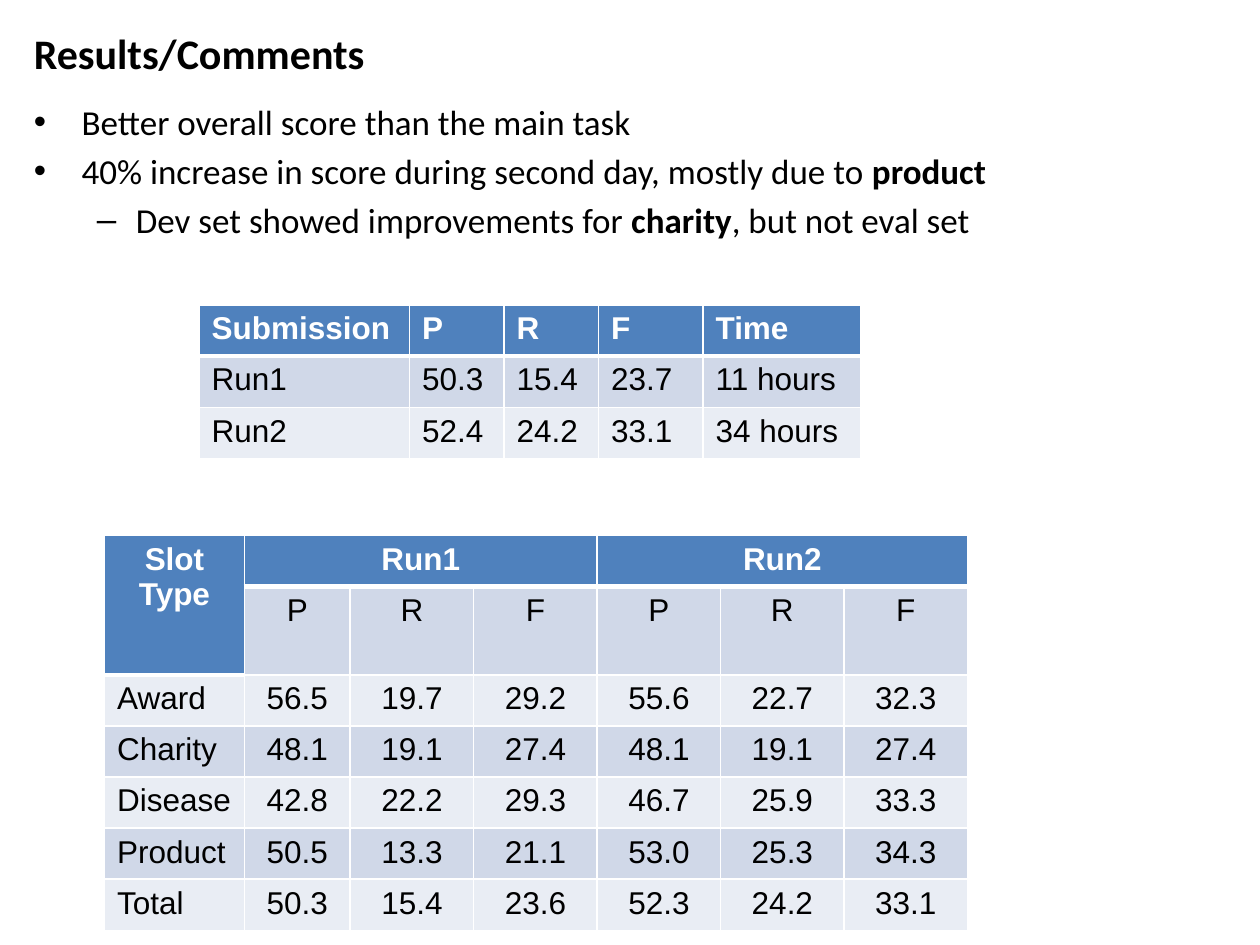
import dataclasses

import lxml.etree
import pptx
import pptx.dml.color
import pptx.enum.text
import pptx.oxml.ns
import pptx.util

Inches = pptx.util.Inches
Pt = pptx.util.Pt
CENTER = pptx.enum.text.PP_ALIGN.CENTER
LEFT = pptx.enum.text.PP_ALIGN.LEFT


@dataclasses.dataclass(frozen=True)
class Theme:
    text: str = "000000"
    inverse: str = "FFFFFF"
    header: str = "4F81BD"
    bands: tuple = ("D0D8E8", "E9EDF4")
    border: str = "FFFFFF"
    text_font: str = "Calibri"
    table_font: str = "Arial"
    title_size: int = 24
    body_size: int = 20
    table_size: int = 18
    thin: int = 1
    thick: int = 3


THEME = Theme()


def rgb(value):
    return pptx.dml.color.RGBColor.from_string(value)


def add_element(parent, tag, **attributes):
    return lxml.etree.SubElement(parent, pptx.oxml.ns.qn(tag), attributes)


def write_text(para, text, font=THEME.text_font, size=THEME.body_size,
               color=THEME.text, bold=False, align=LEFT):
    para.alignment = align
    span = para.add_run()
    span.text = text
    span.font.name = font
    span.font.size = Pt(size)
    span.font.color.rgb = rgb(color)
    span.font.bold = bold


def set_bullet(para, mark, indent, hanging):
    properties = para._p.get_or_add_pPr()
    properties.set("marL", str(Inches(indent)))
    properties.set("indent", str(-Inches(hanging)))
    add_element(properties, "a:buFont", typeface="Arial")
    add_element(properties, "a:buChar", char=mark)


def add_text_frame(page, box):
    frame = page.shapes.add_textbox(*map(Inches, box)).text_frame
    frame.word_wrap = True
    return frame


def add_title(page, box, text):
    frame = add_text_frame(page, box)
    frame.vertical_anchor = pptx.enum.text.MSO_ANCHOR.MIDDLE
    write_text(frame.paragraphs[0], text, size=THEME.title_size, bold=True)


def add_comments(page, box, comments):
    bullets = (("•", 0.38, 0.38), ("–", 0.81, 0.31))
    frame = add_text_frame(page, box)
    for index, (level, spans) in enumerate(comments):
        para = frame.add_paragraph() if index else frame.paragraphs[0]
        para.level = level
        if index:
            para.space_before = Pt(THEME.body_size * 0.2)
        set_bullet(para, *bullets[level])
        for text, bold in spans:
            write_text(para, text, bold=bold)


def set_borders(cell, first_row, header):
    properties = cell._tc.get_or_add_tcPr()
    bottom = THEME.thick if header else THEME.thin
    widths = {"a:lnL": THEME.thin, "a:lnR": THEME.thin}
    if first_row:
        widths["a:lnT"] = THEME.thin
    widths["a:lnB"] = bottom
    for tag, width in widths.items():
        line = add_element(properties, tag, w=str(Pt(width)))
        fill = add_element(line, "a:solidFill")
        add_element(fill, "a:srgbClr", val=THEME.border)


def add_score_table(page, box, widths, rows, merges=(), align=LEFT):
    table = page.shapes.add_table(len(rows), len(widths), *map(Inches, box)).table
    for column, width in zip(table.columns, widths):
        column.width = Inches(width)
    for row in table.rows:
        row.height = Inches(box[3] / len(rows))
    headers = {(0, column) for column in range(len(widths))}
    for top, left, bottom, right in merges:
        table.cell(top, left).merge(table.cell(bottom, right))
        headers |= {(row, left) for row in range(top, bottom + 1)}
    for row, values in enumerate(rows):
        for column, value in enumerate(values):
            cell = table.cell(row, column)
            header = (row, column) in headers
            set_borders(cell, row == 0, header)
            cell.fill.solid()
            cell.fill.fore_color.rgb = rgb(THEME.header if header else THEME.bands[(row - 1) % 2])
            for index, text in enumerate(value.split("\n")):
                frame = cell.text_frame
                para = frame.add_paragraph() if index else frame.paragraphs[0]
                write_text(para, text, font=THEME.table_font, size=THEME.table_size,
                           color=THEME.inverse if header else THEME.text, bold=header,
                           align=align if header or column else LEFT)


def main():
    deck = pptx.Presentation()
    deck.slide_width, deck.slide_height = Inches(10), Inches(7.5)
    page = deck.slides.add_slide(deck.slide_layouts[6])
    add_title(page, (0.17, 0.17, 8, 0.5), "Results/Comments")
    add_comments(page, (0.17, 0.75, 9.5, 6.08), [
        (0, [("Better overall score than the main task", False)]),
        (0, [("40% increase in score during second day, mostly due to ", False),
             ("product", True)]),
        (1, [("Dev set showed improvements for ", False), ("charity", True),
             (", but not eval set", False)]),
    ])
    add_score_table(page, (1.58, 2.42, 5.25, 1.22), (1.67, 0.75, 0.75, 0.83, 1.25), [
        ("Submission", "P", "R", "F", "Time"),
        ("Run1", "50.3", "15.4", "23.7", "11 hours"),
        ("Run2", "52.4", "24.2", "33.1", "34 hours"),
    ])
    add_score_table(page, (0.83, 4.25, 6.83, 2.84), (1.11, 0.84) + (0.98,) * 5, [
        ("Slot\nType", "Run1", "", "", "Run2", "", ""),
        ("",) + ("P", "R", "F") * 2,
        ("Award", "56.5", "19.7", "29.2", "55.6", "22.7", "32.3"),
        ("Charity", "48.1", "19.1", "27.4", "48.1", "19.1", "27.4"),
        ("Disease", "42.8", "22.2", "29.3", "46.7", "25.9", "33.3"),
        ("Product", "50.5", "13.3", "21.1", "53.0", "25.3", "34.3"),
        ("Total", "50.3", "15.4", "23.6", "52.3", "24.2", "33.1"),
    ], merges=((0, 0, 1, 0), (0, 1, 0, 3), (0, 4, 0, 6)), align=CENTER)
    deck.save("out.pptx")


if __name__ == "__main__":
    main()
